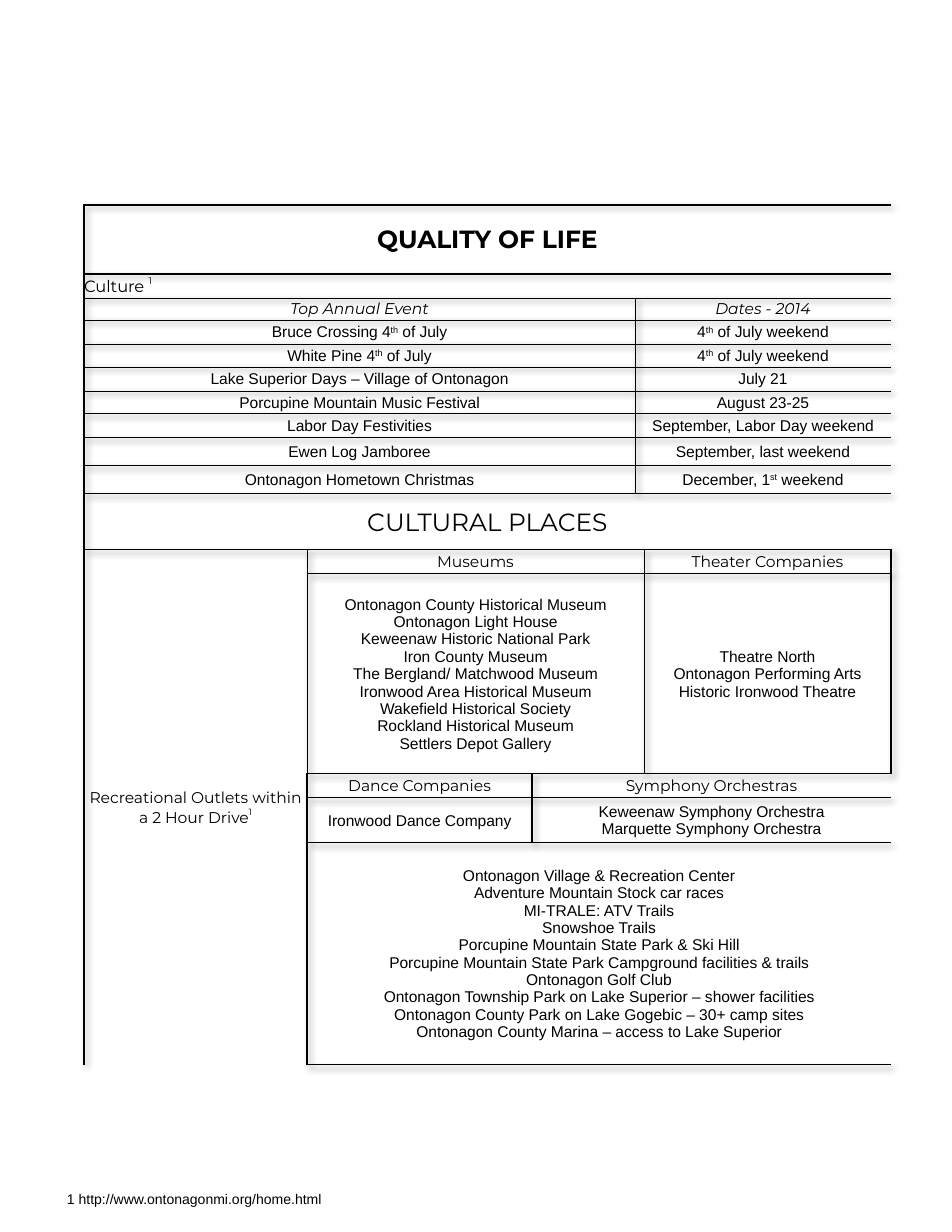
from dataclasses import dataclass

import pptx
import pptx.dml.color
import pptx.enum.text
import pptx.oxml
import pptx.oxml.ns
import pptx.util

PX = 914400 / 112


@dataclass(frozen=True)
class Theme:
    ink: str = "000000"
    heading: str = "Montserrat"
    body: str = "Arial"
    title: float = 16
    label: float = 10.5
    text: float = 10
    note: float = 9
    thin: float = 0.5
    thick: float = 1


T = Theme()
COLS = [223, 225, 103, 9, 247]
ROWS = [69, 24, 22, 24, 23, 24, 23, 24, 28, 28, 56, 24, 200, 24, 45, 222]
NO_STYLE = "{2D5ABB26-0587-4C30-8999-92F81FD0307C}"
EVENTS = [
    ("Bruce Crossing 4^th^ of July", "4^th^ of July weekend"),
    ("White Pine 4^th^ of July", "4^th^ of July weekend"),
    ("Lake Superior Days – Village of Ontonagon", "July 21"),
    ("Porcupine Mountain Music Festival", "August 23-25"),
    ("Labor Day Festivities", "September, Labor Day weekend"),
    ("Ewen Log Jamboree", "September, last weekend"),
    ("Ontonagon Hometown Christmas", "December, 1^st^ weekend"),
]
MUSEUMS = [
    "Ontonagon County Historical Museum\nOntonagon Light House\n"
    "Keweenaw Historic National Park\nIron County Museum\n"
    "The Bergland/ Matchwood Museum\nIronwood Area Historical Museum\n"
    "Wakefield Historical Society\nRockland Historical Museum",
    "Settlers Depot Gallery",
]
THEATERS = "Theatre North\nOntonagon Performing Arts\nHistoric Ironwood Theatre"
ORCHESTRAS = "Keweenaw Symphony Orchestra\nMarquette Symphony Orchestra"
OUTLETS = [
    "Ontonagon Village & Recreation Center",
    "Adventure Mountain Stock car races",
    "MI-TRALE: ATV Trails",
    "Snowshoe Trails",
    "Porcupine Mountain State Park & Ski Hill",
    "Porcupine Mountain State Park Campground facilities & trails",
    "Ontonagon Golf Club",
    "Ontonagon Township Park on Lake Superior – shower facilities",
    "Ontonagon County Park on Lake Gogebic – 30+ camp sites",
    "Ontonagon County Marina – access to Lake Superior",
]


def px(n):
    return pptx.util.Emu(round(n * PX))


def parse_xml(body):
    return pptx.oxml.parse_xml(body.replace(" ", f" {pptx.oxml.ns.nsdecls('a')} ", 1))


def write(p, text, font, size, bold=False, italic=False, align="CENTER", raised=30):
    p.alignment = getattr(pptx.enum.text.PP_ALIGN, align)
    p.font.name, p.font.size = font, pptx.util.Pt(size)
    p.font.bold, p.font.italic = bold, italic
    p.font.color.rgb = pptx.dml.color.RGBColor.from_string(T.ink)
    for i, line in enumerate(text.split("\n")):
        if i:
            p.add_line_break()
        for j, part in enumerate(line.split("^")):
            if part:
                r = p.add_run()
                r.text = part
                if j % 2:
                    r.font._element.set("baseline", str(raised * 1000))


def set_border(cell, side, heavy):
    width = pptx.util.Pt(T.thick if heavy else T.thin)
    cell._tc.get_or_add_tcPr().append(parse_xml(
        f'<a:ln{side} w="{width}"><a:solidFill><a:srgbClr val="{T.ink}"/>'
        f'</a:solidFill></a:ln{side}>'))


def set_borders(table, row, col, rows, cols):
    last_row, last_col = row + rows - 1, col + cols - 1
    boxed = row >= 13
    for r in range(row, last_row + 1):
        for c in range(col, last_col + 1):
            cell = table.cell(r, c)
            edges = [
                ("L", c == col, c == 0 or boxed),
                ("R", c == last_col, c == len(COLS) - 1 or boxed),
                ("T", r == row, row <= 1 or row >= 14),
                ("B", r == last_row, row == 0 or boxed),
            ]
            for side, outer, heavy in edges:
                if outer:
                    set_border(cell, side, heavy)
            cell.fill.background()


def add_entry(table, row, col, text, rows=1, cols=1, font=T.body, size=T.text, **style):
    cell = table.cell(row, col)
    if rows * cols > 1:
        cell.merge(table.cell(row + rows - 1, col + cols - 1))
    cell.vertical_anchor = pptx.enum.text.MSO_ANCHOR.MIDDLE
    inset = px(1 if row > 2 else 0)
    cell.margin_left = cell.margin_right = cell.margin_top = inset
    cell.margin_bottom = 0
    tf = cell.text_frame
    for i, line in enumerate([text] if isinstance(text, str) else text):
        p = tf.add_paragraph() if i else tf.paragraphs[0]
        write(p, line, font, size, **style)
    set_borders(table, row, col, rows, cols)


def add_grid(s):
    frame = s.shapes.add_table(len(ROWS), len(COLS), px(84), px(205),
                               px(sum(COLS)), px(sum(ROWS)))
    table = frame.table
    table.first_row = table.horz_banding = False
    props = table._tbl.tblPr
    props.find(pptx.oxml.ns.qn("a:tableStyleId")).text = NO_STYLE
    props.insert(0, parse_xml(
        '<a:effectLst ><a:outerShdw blurRad="50800" dist="38100" dir="2700000">'
        '<a:srgbClr val="000000"><a:alpha val="40000"/></a:srgbClr>'
        '</a:outerShdw></a:effectLst>'))
    for column, width in zip(table.columns, COLS):
        column.width = px(width)
    for row, height in zip(table.rows, ROWS):
        row.height = px(height)
    return table


def add_note(s, text):
    tf = s.shapes.add_textbox(px(56), px(1185), px(642), px(28)).text_frame
    tf.word_wrap = True
    write(tf.paragraphs[0], text, T.body, T.note, align="LEFT")


def main():
    prs = pptx.Presentation()
    prs.slide_width, prs.slide_height = px(952), px(1232)
    s = prs.slides.add_slide(prs.slide_layouts[6])
    add_note(s, "1 http://www.ontonagonmi.org/home.html")
    table = add_grid(s)
    head = {"font": T.heading}

    add_entry(table, 0, 0, "QUALITY OF LIFE", cols=5, size=T.title, bold=True, **head)
    add_entry(table, 1, 0, "Culture ^1^", cols=5, size=T.label, align="LEFT",
              raised=50, **head)
    add_entry(table, 2, 0, "Top Annual Event", cols=3, italic=True, **head)
    add_entry(table, 2, 3, "Dates - 2014", cols=2, italic=True, **head)
    for row, (event, date) in enumerate(EVENTS, 3):
        add_entry(table, row, 0, event, cols=3)
        add_entry(table, row, 3, date, cols=2)

    add_entry(table, 10, 0, "CULTURAL PLACES", cols=5, size=T.title, **head)
    add_entry(table, 11, 0, "Recreational Outlets within a 2 Hour Drive^1^", rows=5,
              raised=50, **head)
    add_entry(table, 11, 1, "Museums", cols=3, **head)
    add_entry(table, 11, 4, "Theater Companies", **head)
    add_entry(table, 12, 1, MUSEUMS, cols=3)
    add_entry(table, 12, 4, THEATERS)
    add_entry(table, 13, 1, "Dance Companies", **head)
    add_entry(table, 13, 2, "Symphony Orchestras", cols=3, **head)
    add_entry(table, 14, 1, "Ironwood Dance Company")
    add_entry(table, 14, 2, ORCHESTRAS, cols=3)
    add_entry(table, 15, 1, OUTLETS, cols=4)
    prs.save("out.pptx")


if __name__ == "__main__":
    main()
